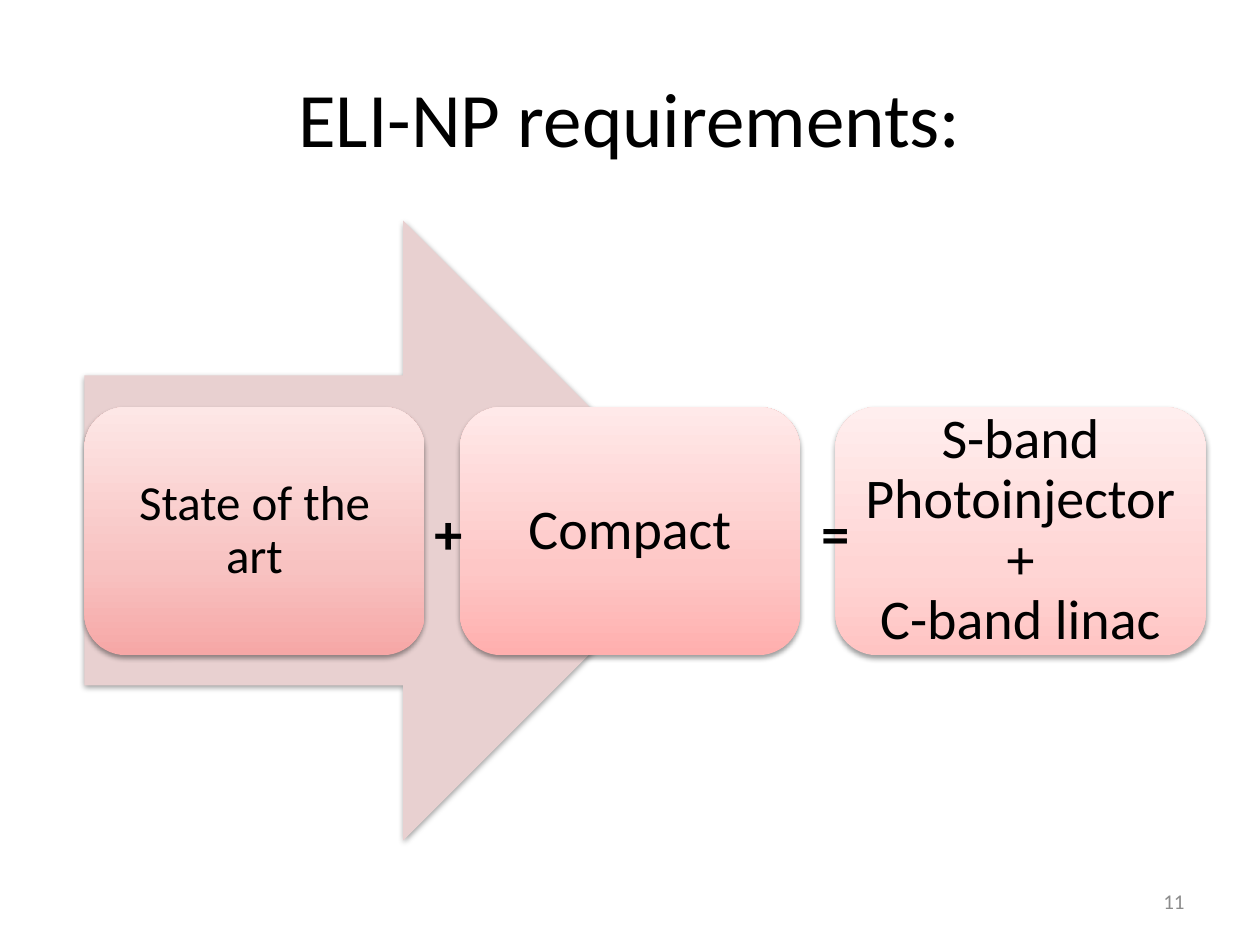
from copy import deepcopy
from dataclasses import dataclass

from lxml import etree
from pptx import Presentation
from pptx import util as u
from pptx.dml.color import RGBColor
from pptx.enum import shapes, text
from pptx.oxml import ns


@dataclass(frozen=True)
class Theme:
    font: str = "Calibri"
    ink: str = "000000"
    muted: str = "8C8C8C"
    arrow: str = "E8D0D0"
    title_size: int = 44
    large_size: int = 32
    medium_size: int = 28
    number_size: int = 12


THEME = Theme()
STOPS = (0, 0.35, 1)
CARDS = [
    (["State of the art"], 2.7, THEME.medium_size, ("F6A7A6", "F8C2C1", "FDE7E6")),
    (["Compact"], 2.7, THEME.large_size, ("FFAFAE", "FEC7C6", "FFE9E9")),
    (["S-band Photoinjector", "+", "C-band linac"], 2.94, THEME.large_size,
     ("FFC4C3", "FFD5D4", "FFEEEE")),
]


def write_text(frame, lines, size, align, color=THEME.ink, bold=False, spacing=None):
    frame.text = "\n".join(lines)
    for paragraph in frame.paragraphs:
        paragraph.alignment = align
        paragraph.line_spacing = spacing
        paragraph.font.name = THEME.font
        paragraph.font.size = u.Pt(size)
        paragraph.font.bold = bold
        paragraph.font.color.rgb = RGBColor.from_string(color)


def add_soft_shadow(shape):
    shape.shadow.inherit = False
    effects = shape._element.spPr.find(ns.qn("a:effectLst"))
    shadow = etree.SubElement(
        effects, ns.qn("a:outerShdw"), blurRad=str(u.Pt(3.1)), dist=str(u.Pt(1.6)),
        dir="5400000", rotWithShape="0")
    color = etree.SubElement(shadow, ns.qn("a:srgbClr"), val="000000")
    etree.SubElement(color, ns.qn("a:alpha"), val="38000")


def fill_gradient(shape, colors):
    shape.fill.gradient()
    shape.fill.gradient_angle = 90
    stop_list = shape._element.spPr.find(ns.qn("a:gradFill")).find(ns.qn("a:gsLst"))
    stop_list.append(deepcopy(stop_list[0]))
    for stop, position, color in zip(shape.fill.gradient_stops, STOPS, colors):
        stop.position = position
        stop.color.rgb = RGBColor.from_string(color)


def add_panel(slide, kind, left, top, width, height):
    shape = slide.shapes.add_shape(
        kind, u.Inches(left), u.Inches(top), u.Inches(width), u.Inches(height))
    shape.line.fill.background()
    add_soft_shadow(shape)
    return shape


def add_title(slide, left, top, width, height):
    title = slide.shapes.title
    title.left, title.top = u.Inches(left), u.Inches(top)
    title.width, title.height = u.Inches(width), u.Inches(height)
    title.text_frame.vertical_anchor = text.MSO_ANCHOR.MIDDLE
    write_text(title.text_frame, ["ELI-NP requirements:"], THEME.title_size,
               text.PP_ALIGN.CENTER)


def add_page_number(slide, left, top, width, height):
    box = slide.shapes.add_textbox(
        u.Inches(left), u.Inches(top), u.Inches(width), u.Inches(height))
    box.text_frame.word_wrap = True
    box.text_frame.vertical_anchor = text.MSO_ANCHOR.MIDDLE
    write_text(box.text_frame, ["11"], THEME.number_size, text.PP_ALIGN.RIGHT,
               THEME.muted)


def add_arrow(slide, left, top, width, height):
    arrow = add_panel(slide, shapes.MSO_SHAPE.RIGHT_ARROW, left, top, width, height)
    arrow.fill.solid()
    arrow.fill.fore_color.rgb = RGBColor.from_string(THEME.arrow)


def add_cards(slide, left, top, pitch, height):
    for index, (lines, width, size, colors) in enumerate(CARDS):
        card = add_panel(slide, shapes.MSO_SHAPE.ROUNDED_RECTANGLE,
                         left + index * pitch, top, width, height)
        fill_gradient(card, colors)
        frame = card.text_frame
        frame.word_wrap = True
        frame.vertical_anchor = text.MSO_ANCHOR.MIDDLE
        frame.margin_left = frame.margin_right = u.Inches(0.12)
        frame.margin_top = frame.margin_bottom = u.Inches(0.12)
        write_text(frame, lines, size, text.PP_ALIGN.CENTER, spacing=0.9)


def add_operator(slide, symbol, left, top, width, height):
    box = slide.shapes.add_textbox(
        u.Inches(left), u.Inches(top), u.Inches(width), u.Inches(height))
    box.text_frame.word_wrap = False
    box.text_frame.auto_size = text.MSO_AUTO_SIZE.SHAPE_TO_FIT_TEXT
    write_text(box.text_frame, [symbol], THEME.large_size, text.PP_ALIGN.LEFT, bold=True)


def main():
    presentation = Presentation()
    presentation.slide_width, presentation.slide_height = u.Inches(10), u.Inches(7.5)
    slide = presentation.slides.add_slide(presentation.slide_layouts[5])
    add_title(slide, 0.5, 0.3, 9, 1.25)
    add_page_number(slide, 7.17, 6.95, 2.33, 0.4)
    add_arrow(slide, 0.67, 1.75, 4.99, 4.92)
    add_cards(slide, 0.67, 3.23, 2.98, 1.97)
    for symbol, left in (("+", 3.35), ("=", 6.42)):
        add_operator(slide, symbol, left, 3.91, 0.5, 0.64)
    presentation.save("out.pptx")


if __name__ == "__main__":
    main()
